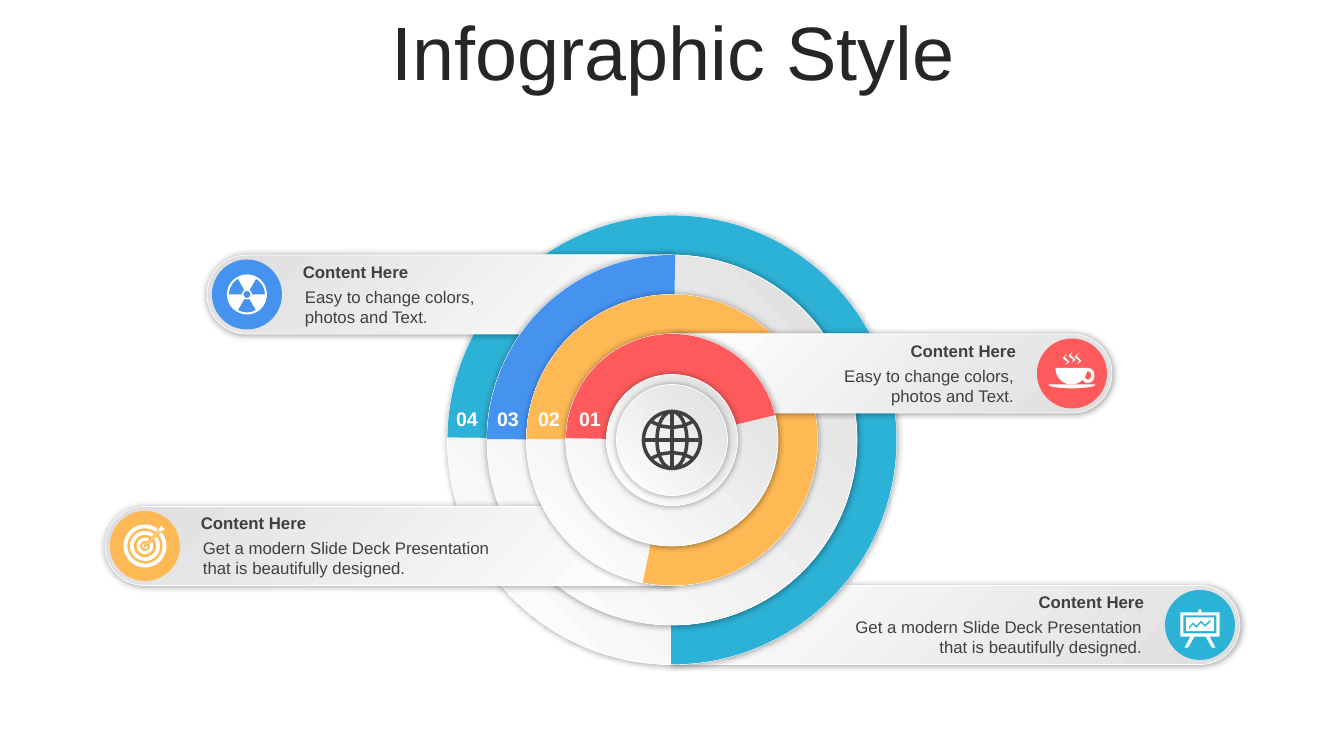
import math

import lxml.etree
import pptx
import pptx.dml.color
import pptx.enum.shapes
import pptx.enum.text
import pptx.oxml.ns
import pptx.util

PX = 914400 / 100.8
SHAPES = pptx.enum.shapes.MSO_SHAPE
ALIGN = pptx.enum.text.PP_ALIGN
LEFT, RIGHT = -1, 1
UP, DOWN = -1, 1

TITLE = "Infographic Style"
HEADING = "Content Here"
SHORT = "Easy to change colors, photos and Text."
LONG = "Get a modern Slide Deck Presentation that is beautifully designed."
RINGS = [
    ("04", "2CB2D7", (180.65, 90.22), RIGHT, DOWN, 568, LONG, 330, "board"),
    ("03", "4592EF", (180.27, 270.98), LEFT, UP, 465, SHORT, 195, "radiation"),
    ("02", "FFB954", (180.42, 101.58), LEFT, DOWN, 567, LONG, 330, "target"),
    ("01", "FE5A5B", (180.98, 346.45), RIGHT, UP, 440, SHORT, 195, "cup"),
]
CENTER_X, CENTER_Y = 672, 440
OUTER, BAND = 449, 79
HUBS = [131, 111]
BADGE, BADGE_INSET = 70, 40
DARK, WHITE, GREY = "404040", "FFFFFF", "DEDEDE"


def arc(x, y, radius_x, radius_y, start=0, end=360):
    steps = max(8, abs(end - start) // 8)
    angles = [math.radians(start + (end - start) * i / steps) for i in range(steps + 1)]
    return [(x + radius_x * math.cos(a), y + radius_y * math.sin(a)) for a in angles]


def circle(radius):
    return arc(0, 0, radius, radius)


def sector(start):
    return arc(0, 0, 180, 180, start, start + 60) + arc(0, 0, 50, 50, start + 60, start)


def box(left, top, right, bottom):
    return [(left, top), (right, top), (right, bottom), (left, bottom)]


BOARD_HALF = [(15, -156), (15, -126), (195, -126), (195, 116), (95, 116),
              (155, 227), (120, 227), (55, 116)]
TREND = [(-110, 20), (-70, -28), (-35, 5), (10, -45), (50, -5), (105, -55)]
STEAM = [(-45, -207), (-75, -166), (-25, -116), (-65, -86), (-45, -116), (-96, -156)]
ARROW = [(180, -220), (180, -190), (220, -180), (170, -140), (150, -140),
         (20, -5), (-5, 5), (5, -20), (130, -150), (130, -180)]
LATITUDE = [(-200, -180), (-110, -140), (0, -125), (110, -140), (200, -180)]
GLOBE_LINES = [
    LATITUDE,
    [(x, -y) for x, y in LATITUDE],
    [(-280, 0), (280, 0)],
    [(0, -280), (0, 280)],
]
ICONS = {
    "board": [[
        BOARD_HALF + [(-x, y) for x, y in reversed(BOARD_HALF)],
        box(-165, -96, 165, 85),
        box(-142, -75, 142, 62),
        TREND + [(x, y + 25) for x, y in reversed(TREND)],
    ]],
    "radiation": [[circle(200), circle(35)] + [sector(a) for a in (60, 180, 300)]],
    "target": [[circle(r) for r in (215, 176, 150, 112, 82, 50, 27)], [ARROW]],
    "cup": [
        [arc(-5, -55, 160, 165, 0, 180)],
        [arc(160, 20, 65, 75), arc(160, 20, 32, 42)],
        [arc(0, 110, 235, 38, 0, 180)],
    ] + [[[(x + dx, y + dy) for x, y in STEAM]] for dx, dy in ((0, 0), (60, -20), (120, -10))],
}

presentation = pptx.Presentation()
presentation.slide_width = round(1344 * PX)
presentation.slide_height = round(756 * PX)
slide = presentation.slides.add_slide(presentation.slide_layouts[6])


def color(value):
    return pptx.dml.color.RGBColor.from_string(value)


def paint(shape, fill=None, line=None, width=0.5):
    shape.shadow.inherit = False
    if fill:
        shape.fill.solid()
        shape.fill.fore_color.rgb = color(fill)
    else:
        shape.fill.background()
    if line:
        shape.line.color.rgb = color(line)
        shape.line.width = pptx.util.Pt(width)
    else:
        shape.line.fill.background()


def add_centered(kind, x, y, width, height):
    lengths = (x - width / 2, y - height / 2, width, height)
    return slide.shapes.add_shape(kind, *[round(v * PX) for v in lengths])


def make_paper(shape):
    paint(shape, WHITE, WHITE)
    shape.fill.gradient()
    shape.fill.gradient_angle = 225
    for stop, value, position in zip(shape.fill.gradient_stops, (GREY, WHITE), (0, 1)):
        stop.color.rgb = color(value)
        stop.position = position
    effects = shape.element.spPr.find(pptx.oxml.ns.qn("a:effectLst"))
    shadow = lxml.etree.SubElement(effects, pptx.oxml.ns.qn("a:outerShdw"),
                                   blurRad="63500", dist="0", dir="0", algn="ctr", rotWithShape="0")
    black = lxml.etree.SubElement(shadow, pptx.oxml.ns.qn("a:srgbClr"), val="000000")
    lxml.etree.SubElement(black, pptx.oxml.ns.qn("a:alpha"), val="40000")


def add_text(text, left, top, width, height, size, value, align, bold=False):
    lengths = [round(v * PX) for v in (left, top, width, height)]
    frame = slide.shapes.add_textbox(*lengths).text_frame
    frame.word_wrap = True
    frame.text = text
    paragraph = frame.paragraphs[0]
    paragraph.alignment = align
    font = paragraph.runs[0].font
    font.name, font.size, font.bold = "Arial", pptx.util.Pt(size), bold
    font.color.rgb = color(value)
    return frame


def add_outline(contours, x, y, close=True):
    builder = slide.shapes.build_freeform(*contours[0][0], scale=PX / 10)
    for index, contour in enumerate(contours):
        if index:
            builder.move_to(*contour[0])
        builder.add_line_segments(contour[1:], close=close)
    return builder.convert_to_shape(round(x * PX), round(y * PX))


def add_caption(detail, detail_width, side, end, y):
    align = ALIGN.LEFT if side == LEFT else ALIGN.RIGHT
    rows = [
        (detail, detail_width, 88, -13, 50, False),
        (HEADING, detail_width + 4, 86, -38, 30, True),
    ]
    for text, width, inset, offset, height, bold in rows:
        edge = end - side * inset
        left = edge if side == LEFT else edge - width
        add_text(text, left, y + offset, width, height, 12, DARK, align, bold)


title = add_text(TITLE, 35, 16, 1276, 80, 54, "262626", ALIGN.CENTER)
title.vertical_anchor = pptx.enum.text.MSO_ANCHOR.MIDDLE
title.paragraphs[0].line_spacing = 0.9
title.paragraphs[0].space_before = pptx.util.Pt(10)

bar_tips = []
for index, (number, tint, angles, side, level, length, *rest) in enumerate(RINGS):
    diameter = OUTER - index * BAND
    bar_y = CENTER_Y + level * (diameter - BAND) / 2
    bar = add_centered(SHAPES.ROUND_2_SAME_RECTANGLE, CENTER_X + side * length / 2, bar_y, BAND, length)
    bar.adjustments[0], bar.adjustments[1] = 0.5, 0
    bar.rotation = 90 if side == RIGHT else 270
    make_paper(bar)
    make_paper(add_centered(SHAPES.OVAL, CENTER_X, CENTER_Y, diameter, diameter))
    pie = add_centered(SHAPES.PIE, CENTER_X, CENTER_Y, diameter, diameter)
    for position, angle in enumerate(angles):
        pie.adjustments[position] = angle * 0.6
    paint(pie, tint)
    bar_tips.append((CENTER_X + side * length, bar_y))

for diameter in HUBS:
    make_paper(add_centered(SHAPES.OVAL, CENTER_X, CENTER_Y, diameter, diameter))

for index, (ring, (tip, y)) in enumerate(zip(RINGS, bar_tips)):
    number, tint, angles, side, level, length, detail, detail_width, icon = ring
    badge_x = tip - side * BADGE_INSET
    paint(add_centered(SHAPES.OVAL, badge_x, y, BADGE, BADGE), tint)
    add_caption(detail, detail_width, side, tip, y)
    add_text(number, 442 + 41 * index, 402, 50, 34, 14, WHITE, ALIGN.CENTER, True)
    for layer, contours in enumerate(ICONS[icon]):
        outline = tint if icon == "target" and layer else None
        paint(add_outline(contours, badge_x, y), WHITE, outline, 1)

for width in (57, 30):
    paint(add_centered(SHAPES.OVAL, CENTER_X, CENTER_Y, width, 57), None, DARK, 2.5)
for points in GLOBE_LINES:
    paint(add_outline([points], CENTER_X, CENTER_Y, False), None, DARK, 2.5)

presentation.save("out.pptx")
